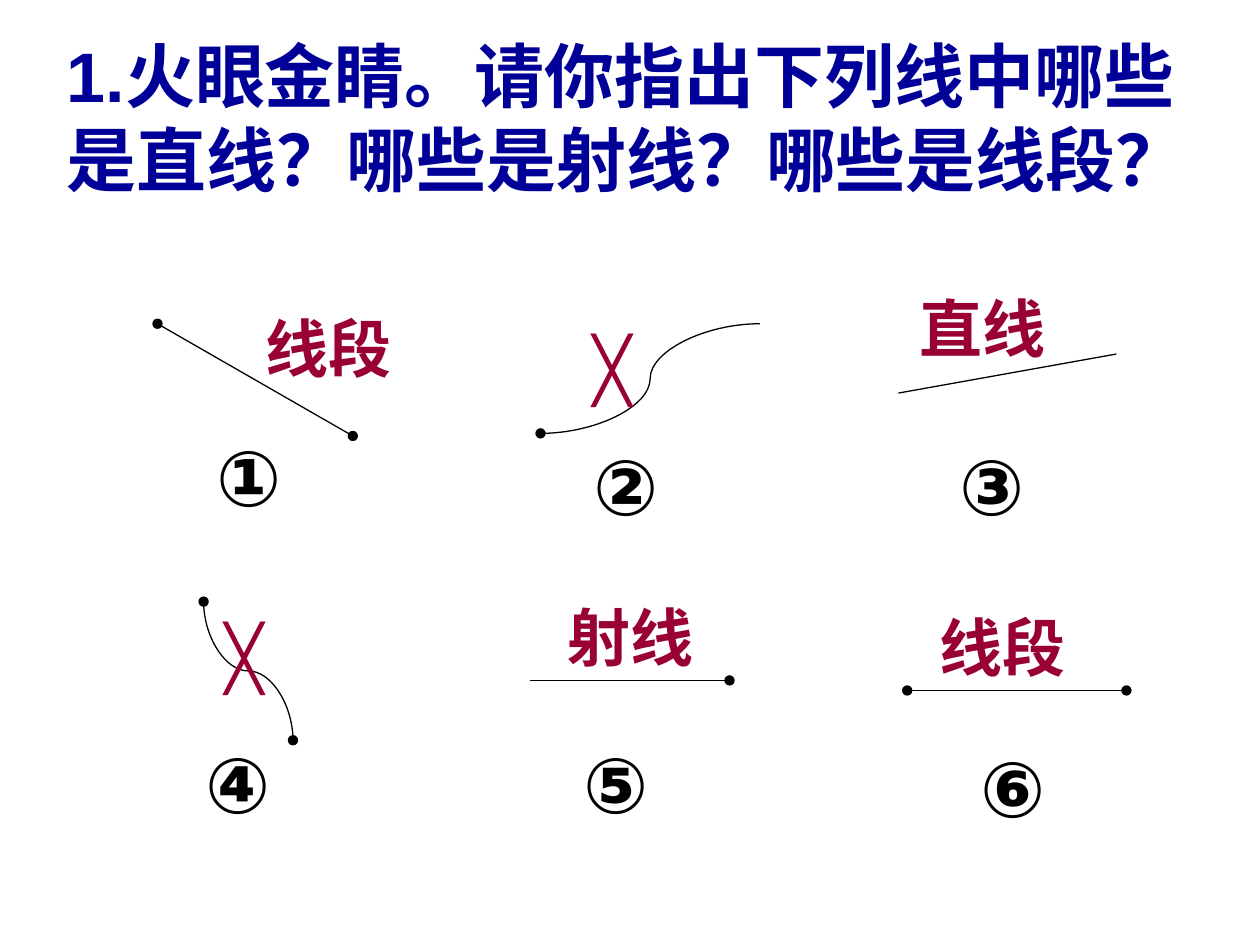
"""Build a geometry quiz slide on straight lines, rays and segments."""
import dataclasses
import typing

import lxml.etree
import pptx
import pptx.dml.color
import pptx.enum.shapes
import pptx.enum.text
import pptx.oxml.ns
import pptx.util

Inches = pptx.util.Inches
Point = typing.Tuple[float, float]
COLORS = {"title": "000099", "ink": "000000", "answer": "990033"}
FONT = {"name": "Arial", "bold": True}
STRAIGHT = pptx.enum.shapes.MSO_CONNECTOR.STRAIGHT
CURVE = pptx.enum.shapes.MSO_CONNECTOR.CURVE


@dataclasses.dataclass
class Figure:
    number: str
    number_at: Point
    start: Point
    end: Point
    dots: typing.Tuple[str, ...] = ()
    kind: typing.Any = STRAIGHT
    rotation: int = 0


@dataclasses.dataclass
class Answer:
    text: str
    at: Point
    width: float = 1.53


FIGURES = [
    Figure("①", (1.62, 3.36), (1.25, 2.57), (2.8, 3.46), ("head", "tail")),
    Figure("④", (1.53, 5.8), (2.52, 4.97), (1.42, 5.68), ("head", "tail"), CURVE, 270),
    Figure("⑤", (4.53, 5.8), (4.21, 5.4), (5.79, 5.4), ("tail",)),
    Figure("③", (7.52, 3.43), (8.86, 2.81), (7.13, 3.12)),
    Figure("②", (4.61, 3.43), (4.29, 3.44), (6.03, 2.57), ("head",), CURVE),
    Figure("⑥", (7.68, 5.83), (7.2, 5.48), (8.94, 5.48), ("head", "tail")),
]
ANSWERS = [
    Answer("线段", (2.01, 2.41)),
    Answer("╳", (4.61, 2.57), 1.02),
    Answer("射线", (4.41, 4.7)),
    Answer("直线", (7.2, 2.25)),
    Answer("线段", (7.36, 4.78)),
    Answer("╳", (1.69, 4.85), 1.02),
]


def write(sp: typing.Any, text: str, size: int, color: str) -> None:
    tf = sp.text_frame
    frame = {
        "word_wrap": True,
        "auto_size": pptx.enum.text.MSO_AUTO_SIZE.NONE,
        "vertical_anchor": pptx.enum.text.MSO_ANCHOR.TOP,
    }
    for name, value in frame.items():
        setattr(tf, name, value)
    p = tf.paragraphs[0]
    p.alignment = pptx.enum.text.PP_ALIGN.LEFT
    r = p.add_run()
    r.text = text
    for name, value in {**FONT, "size": pptx.util.Pt(size)}.items():
        setattr(r.font, name, value)
    r.font.color.rgb = pptx.dml.color.RGBColor.from_string(COLORS[color])


def add_label(shapes: typing.Any, text: str, at: Point, size: Point,
              points: int, color: str) -> None:
    sp = shapes.add_textbox(*map(Inches, (*at, *size)))
    write(sp, text, points, color)


def add_figure(shapes: typing.Any, fig: Figure) -> None:
    group = shapes.add_group_shape()
    cx = group.shapes.add_connector(fig.kind, *map(Inches, (*fig.start, *fig.end)))
    cx.line.width = pptx.util.Pt(0.75)
    cx.line.color.rgb = pptx.dml.color.RGBColor.from_string(COLORS["ink"])
    qn = pptx.oxml.ns.qn
    props = cx._element.spPr
    if fig.rotation:
        props.find(qn("a:xfrm")).set("rot", str(fig.rotation * 60000))
    for end in fig.dots:
        lxml.etree.SubElement(props.find(qn("a:ln")), qn(f"a:{end}End"), type="oval")
    lxml.etree.SubElement(props, qn("a:effectLst"))
    add_label(group.shapes, fig.number, fig.number_at, (0.95, 0.83), 44, "ink")


def main() -> None:
    prs = pptx.Presentation()
    prs.slide_width, prs.slide_height = Inches(10), Inches(7.5)
    s = prs.slides.add_slide(prs.slide_layouts.get_by_name("Title Only"))
    title = s.shapes.title
    box = {"left": 0.43, "top": 0.21, "width": 9.45, "height": 1.43}
    for name, value in box.items():
        setattr(title, name, Inches(value))
    write(title, "1.火眼金睛。请你指出下列线中哪些是直线？哪些是射线？哪些是线段？", 40, "title")
    for fig in FIGURES:
        add_figure(s.shapes, fig)
    for answer in ANSWERS:
        add_label(s.shapes, answer.text, answer.at, (answer.width, 0.7), 36, "answer")
    prs.save("out.pptx")


if __name__ == "__main__":
    main()
